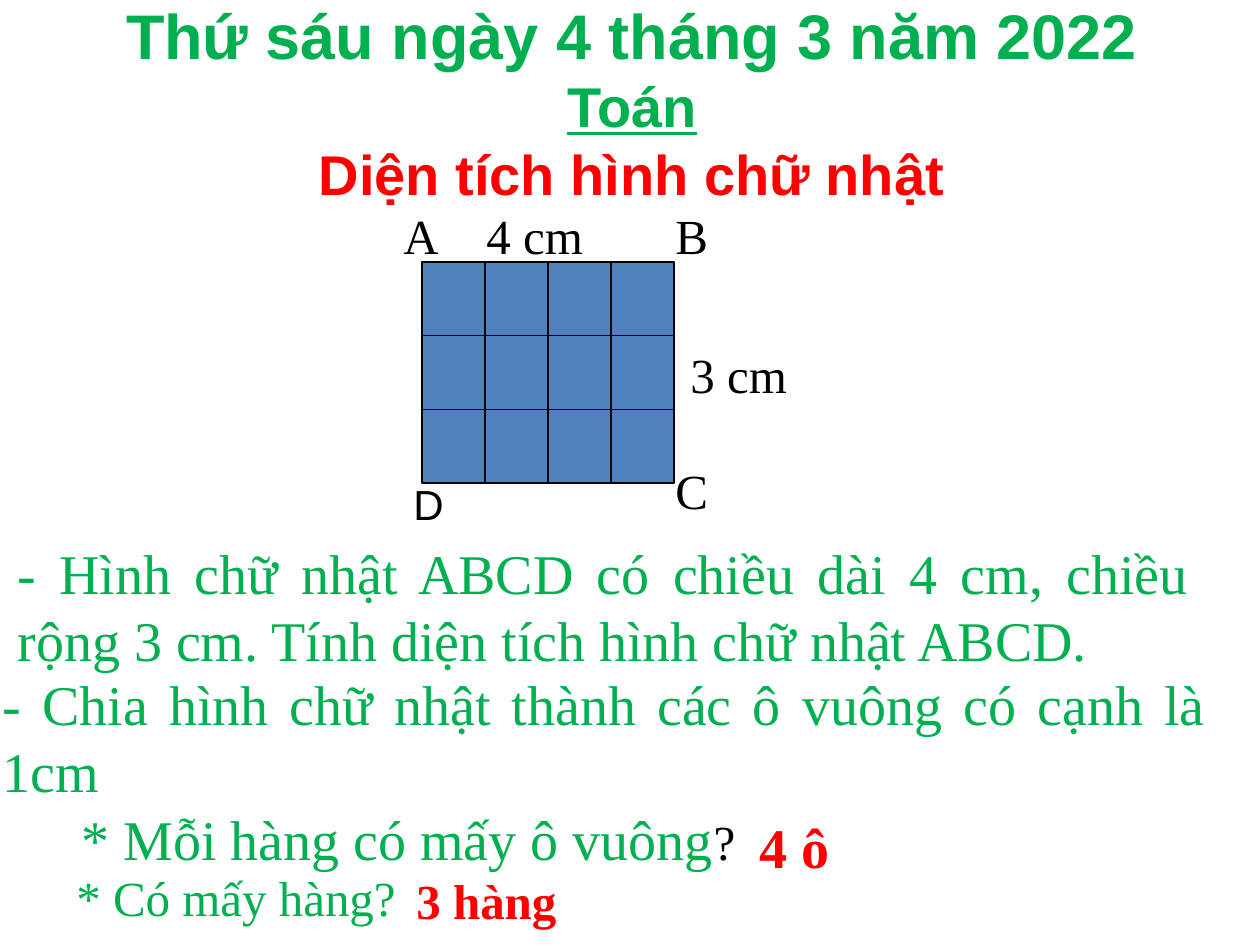
"""Build a maths lesson slide on the area of a rectangle."""
from dataclasses import dataclass

from lxml.etree import SubElement
from pptx import Presentation
from pptx.dml.color import RGBColor
from pptx.enum.shapes import MSO_CONNECTOR, MSO_SHAPE
from pptx.enum.text import MSO_ANCHOR, MSO_AUTO_SIZE, PP_ALIGN
from pptx.oxml.ns import qn
from pptx.util import Pt

SCALE = 914400 / 126


@dataclass(frozen=True)
class Theme:
    green: str = "00B050"
    red: str = "FF0000"
    black: str = "000000"
    blue: str = "4F81BD"
    serif: str = "Times New Roman"
    sans: str = "Arial"
    head: int = 36
    big: int = 32
    mid: int = 28
    small: int = 24
    line: float = 0.75


def style(run, size, color, face, bold=False):
    font = run.font
    font.size, font.name, font.bold = Pt(size), face, bold
    font.color.rgb = RGBColor.from_string(color)


def write(home, text, box, size, color, face=Theme.serif, bold=False, align=PP_ALIGN.LEFT):
    shape = home.add_textbox(*[int(n * SCALE) for n in box])
    frame = shape.text_frame
    frame.word_wrap = True
    frame.auto_size = MSO_AUTO_SIZE.SHAPE_TO_FIT_TEXT
    frame.text = text
    para = frame.paragraphs[0]
    para.alignment = align
    space = SubElement(para._p.get_or_add_pPr(), qn("a:spcBef"))
    SubElement(space, qn("a:spcPct"), val="50000")
    style(para.runs[0], size, color, face, bold)
    return para


t = Theme()
deck = Presentation()
deck.slide_width, deck.slide_height = int(1260 * SCALE), int(945 * SCALE)
slide = deck.slides.add_slide(deck.slide_layouts[5])
shapes = slide.shapes

title = shapes.title
title.left, title.top, title.width, title.height = [int(n * SCALE) for n in (52, -10, 1160, 224)]
frame = title.text_frame
frame.word_wrap = True
frame.auto_size = MSO_AUTO_SIZE.SHAPE_TO_FIT_TEXT
frame.vertical_anchor = MSO_ANCHOR.TOP
frame.text = "Thứ sáu ngày 4 tháng 3 năm 2022\vToán\nDiện tích hình chữ nhật"
top, last = frame.paragraphs
top.alignment = last.alignment = PP_ALIGN.CENTER
date, topic = top.runs
style(date, t.head, t.green, t.sans, True)
style(topic, t.big, t.green, t.sans, True)
topic.font.underline = True
style(last.runs[0], t.big, t.red, t.sans, True)
for gap in top._p.findall(qn("a:br")):
    SubElement(gap, qn("a:rPr"), sz=str(t.head * 100))

for text, box in [
    ("- Hình chữ nhật ABCD có chiều dài 4 cm, chiều rộng 3 cm. "
     "Tính diện tích hình chữ nhật ABCD.", (5, 532, 1197, 149)),
    ("- Chia hình chữ nhật thành các ô vuông có cạnh là 1cm", (-10, 663, 1229, 149)),
]:
    write(shapes, text, box, t.big, t.green, align=PP_ALIGN.JUSTIFY)
write(shapes, "3 cm", (678, 338, 158, 72), t.mid, t.black)

group = shapes.add_group_shape().shapes
left, upper, width, height = 422, 262, 252, 221
cols, rows = 4, 3
rect = group.add_shape(MSO_SHAPE.RECTANGLE, *[int(n * SCALE) for n in (left, upper, width, height)])
rect.shadow.inherit = False
rect.fill.solid()
rect.fill.fore_color.rgb = RGBColor.from_string(t.blue)
rect.line.color.rgb = RGBColor.from_string(t.black)
rect.line.width = Pt(t.line)

for text, x, y, w, h, size, face in [
    ("B", 663, 199, 84, 72, t.mid, t.serif),
    ("C", 663, 454, 84, 72, t.mid, t.serif),
    ("D", 401, 472, 84, 63, t.small, t.sans),
    ("4 cm", 474, 199, 158, 72, t.mid, t.serif),
    ("A", 391, 199, 84, 72, t.mid, t.serif),
]:
    write(group, text, (x, y, w, h), size, t.black, face)

across = [left + width * n / cols for n in range(1, cols)]
down = [upper + height * n / rows for n in range(1, rows)]
ends = [(x, upper, x, upper + height) for x in across]
ends += [(left, y, left + width, y) for y in down]
for end in ends:
    rule = group.add_connector(MSO_CONNECTOR.STRAIGHT, *[int(n * SCALE) for n in end])
    rule.line.color.rgb = RGBColor.from_string(t.black)
    rule.line.width = Pt(t.line)
    SubElement(rule._element.spPr, qn("a:effectLst"))

ask = write(shapes, "* Mỗi hàng có mấy ô vuông", (69, 798, 703, 81), t.big, t.green)
mark = ask.add_run()
mark.text = "?"
style(mark, t.mid, t.black, t.serif)
write(shapes, "4 ô", (747, 806, 147, 81), t.big, t.red, bold=True)
write(shapes, "* Có mấy hàng?", (64, 861, 410, 72), t.mid, t.green)
write(shapes, "3 hàng", (404, 864, 315, 72), t.mid, t.red, bold=True)

deck.save("out.pptx")
